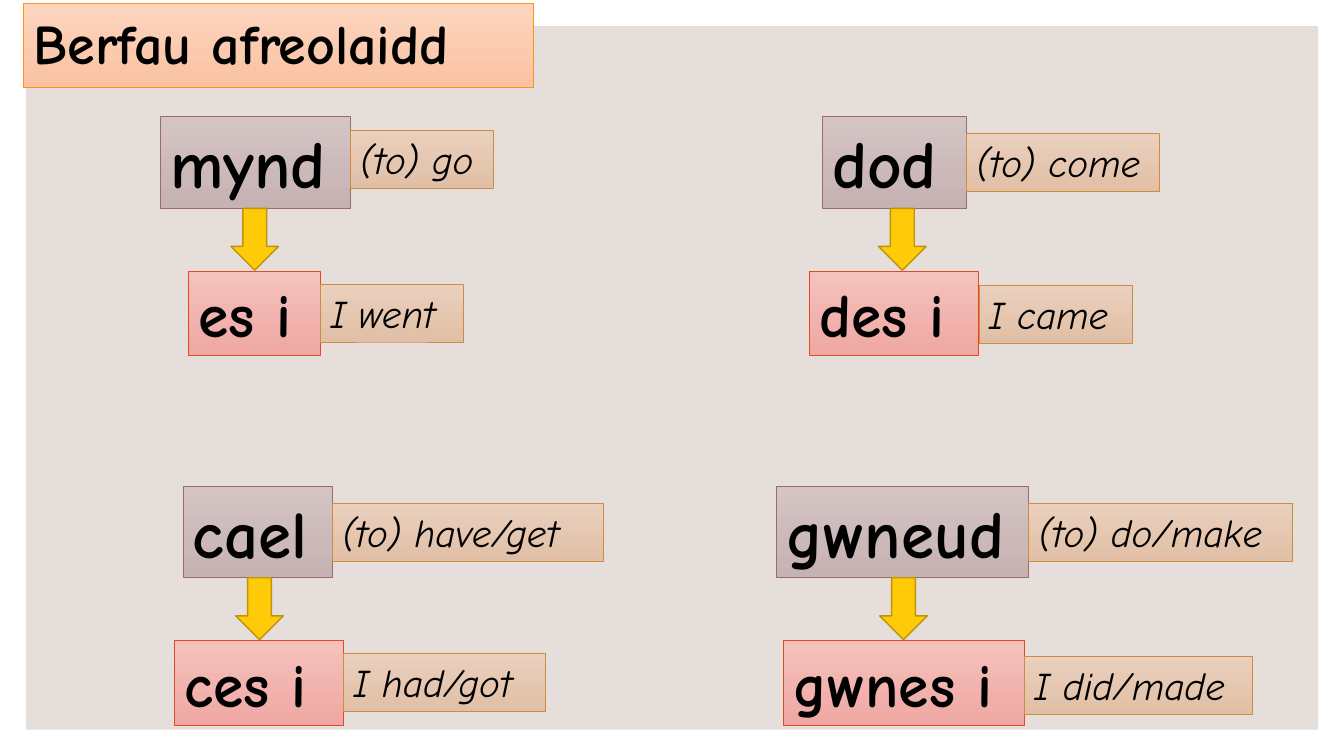
import pptx
import pptx.util
from pptx.dml.color import RGBColor
from pptx.enum.shapes import MSO_SHAPE
from pptx.enum.text import MSO_ANCHOR, MSO_AUTO_SIZE, PP_ALIGN

Cm = pptx.util.Cm
Pt = pptx.util.Pt


def rgb(value):
    return RGBColor.from_string(value)


class Deck:
    FONT = "Comic Neue"
    # Box styles: gradient top, gradient bottom, line, height, text size, bold
    TITLE = ("FDD5BF", "FAC2A2", "F8931D", 1.96, 40, True)
    VERB = ("D4C4C4", "C6B2B2", "9C6A6A", 2.31, 48, True)
    PAST = ("F5C1BD", "EFA8A3", "E64823", 2.13, 44, True)
    GLOSS = ("EAD0BD", "E1BFA6", "CE8D3E", 1.46, 28, False)

    def __init__(self, prs):
        self.s = prs.slides.add_slide(prs.slide_layouts[5])

    def shape(self, kind, x, y, w, h):
        sp = self.s.shapes.add_shape(kind, Cm(x), Cm(y), Cm(w), Cm(h))
        sp.shadow.inherit = False
        return sp

    def format_box(self, sp, text, style):
        top, bottom, line, _, size, bold = style
        sp.fill.gradient()
        sp.fill.gradient_angle = 270
        for stop, color in zip(sp.fill.gradient_stops, (top, bottom)):
            stop.color.rgb = rgb(color)
        sp.line.color.rgb = rgb(line)
        sp.line.width = Pt(0.5)
        tf = sp.text_frame
        tf.word_wrap = True
        tf.auto_size = MSO_AUTO_SIZE.SHAPE_TO_FIT_TEXT
        tf.vertical_anchor = MSO_ANCHOR.TOP
        p = tf.paragraphs[0]
        p.alignment = PP_ALIGN.LEFT
        r = p.add_run()
        r.text = text
        r.font.name = self.FONT
        r.font.size = Pt(size)
        r.font.bold = bold
        r.font.italic = not bold
        r.font.color.rgb = rgb("000000")

    def title(self, text, x, y, w):
        sp = self.s.shapes.title
        sp.left, sp.top, sp.width, sp.height = Cm(x), Cm(y), Cm(w), Cm(self.TITLE[3])
        self.format_box(sp, text, self.TITLE)

    def panel(self, x, y, w, h):
        sp = self.shape(MSO_SHAPE.RECTANGLE, x, y, w, h)
        sp.fill.solid()
        sp.fill.fore_color.rgb = rgb("E5DEDB")
        sp.line.fill.background()
        # Keep the panel behind the title
        self.s.shapes.title.element.addprevious(sp.element)

    def box(self, text, x, y, w, style):
        sp = self.shape(MSO_SHAPE.RECTANGLE, x, y, w, style[3])
        self.format_box(sp, text, style)

    def pair(self, y, style, word, x, w, gloss, gloss_w, drop):
        """A Welsh word with its English meaning attached on the right."""
        self.box(word, x, y, w, style)
        self.box(gloss, x + w, y + drop, gloss_w, self.GLOSS)

    def arrow(self, x, y):
        sp = self.shape(MSO_SHAPE.DOWN_ARROW, x, y, 1.2, 1.56)
        sp.fill.solid()
        sp.fill.fore_color.rgb = rgb("FFCA08")
        sp.line.color.rgb = rgb("BD9506")
        sp.line.width = Pt(1)


# Row top, arrow left, then verb and past: word, left, width, meaning, its width, its drop
TOP, BOTTOM = 2.94, 12.25
VERBS = [
    (TOP, 5.82, ("mynd", 4.04, 4.78, "(to) go", 3.61, 0.34),
     ("es i", 4.75, 3.33, "I went", 3.61, 0.33)),
    (TOP, 22.14, ("dod", 20.72, 3.63, "(to) come", 4.88, 0.43),
     ("des i", 20.4, 4.27, "I came", 3.86, 0.36)),
    (BOTTOM, 5.94, ("cael", 4.61, 3.76, "(to) have/get", 6.83, 0.43),
     ("ces i", 4.39, 4.27, "I had/got", 5.08, 0.33)),
    (BOTTOM, 22.17, ("gwneud", 19.57, 6.35, "(to) do/make", 6.65, 0.43),
     ("gwnes i", 19.75, 6.07, "I did/made", 5.74, 0.4)),
]


def main():
    prs = pptx.Presentation()
    prs.slide_width, prs.slide_height = Cm(33.87), Cm(19.05)
    deck = Deck(prs)

    # Background panel and title
    deck.panel(0.66, 0.66, 32.56, 17.73)
    deck.title("Berfau afreolaidd", 0.59, 0.09, 12.85)

    # Each verb leads down to its past form
    for y, arrow_x, verb, past in VERBS:
        deck.pair(y, deck.VERB, *verb)
        deck.arrow(arrow_x, y + 2.31)
        deck.pair(y + 3.89, deck.PAST, *past)

    prs.save("out.pptx")


if __name__ == "__main__":
    main()
